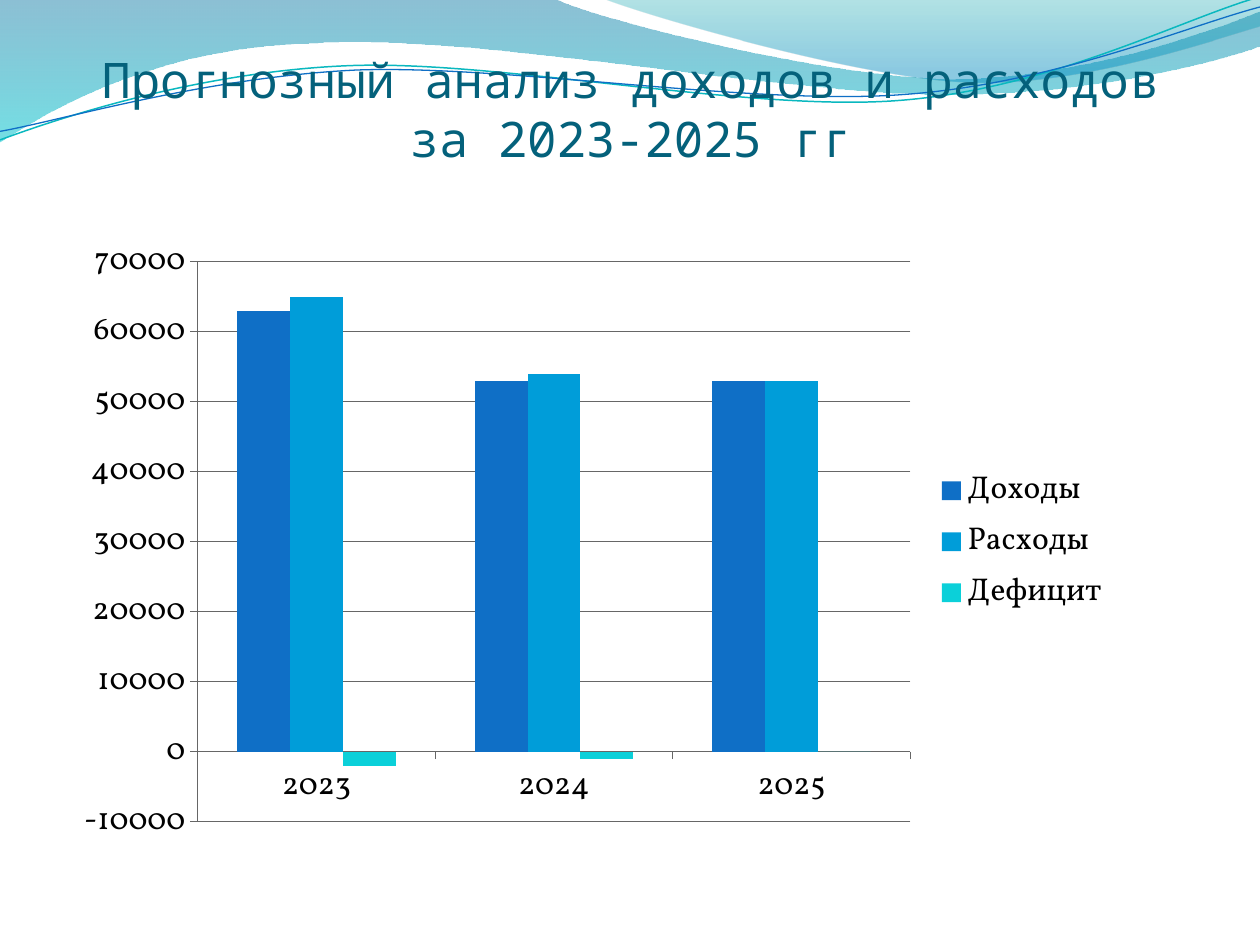
"""Builds a slide with wave decoration, a title and a budget forecast chart."""
import pptx
import pptx.chart.data
import pptx.dml.color
import pptx.enum.chart
import pptx.enum.text
import pptx.oxml
import pptx.oxml.ns
import pptx.util

Pt = pptx.util.Pt
HUES = {
    "title": "04617B", "text": "000000", "axis": "666666",
    "income": "0F6FC6", "spend": "009DD9", "gap": "0BD0D9",
    "deep": "0074A1", "aqua": "00C6CF", "mint": "00A1A9", "sky": "008BBF",
    "teal": "0AB8BF",
}
BAND = [[(-0.5, 0)], [(317, -0.7)],
        [(343, 12), (478, 45), (546, 45)], [(614, 45), (690, 19), (720, 6.5)],
        [(721, 26)], [(708, 32), (626, 55), (537, 54)],
        [(447, 54), (275, 20), (185, 24.5)], [(93, 26), (33, 60), (-0.7, 81.4)]]
SHEEN = [[(345, -0.7)], [(366, 8), (491, 45), (554, 47)],
         [(616, 49.5), (692, 23), (720, 15)], [(720, 0)]]
TEAL = [[(-1.4, 63)], [(34.2, 51.7), (114.3, 29.4), (199.4, 30)],
        [(284.4, 30.5), (425.8, 67.2), (512, 64.7)],
        [(599.2, 62.3), (676, 25.9), (720.6, 15.4)]]
BLUE = [[(-1.1, 58.1)], [(33.2, 53.7), (118.2, 32.6), (204.3, 32.7)],
        [(290.3, 33.7), (429.1, 63.8), (515.3, 61.4)],
        [(601.5, 59.4), (678.9, 30), (721.4, 21)]]
YEARS = ["2023", "2024", "2025"]
ROWS = [("Доходы", "income", (63000, 53000, 53000)),
        ("Расходы", "spend", (65000, 54000, 53000)),
        ("Дефицит", "gap", (-2000, -1000, 0))]


def tint(name):
    """Return the named colour."""
    return pptx.dml.color.RGBColor.from_string(HUES[name])


def node(tag, attrs=""):
    """Make one drawing element."""
    space = pptx.oxml.ns.nsdecls("a")
    return pptx.oxml.parse_xml(f"<a:{tag} {space} {attrs}/>")


def draw(slide, curve, close):
    """Add an outline of straight and cubic pieces."""
    dots = [(Pt(x), Pt(y)) for piece in curve for x, y in piece]
    pen = slide.shapes.build_freeform(*dots[0])
    pen.add_line_segments(dots[1:], close=close)
    shape = pen.convert_to_shape()
    shape.shadow.inherit = False
    lines = iter(list(shape._element.iter(pptx.oxml.ns.qn("a:lnTo"))))
    for piece in curve[1:]:
        group = [next(lines) for dot in piece]
        if len(group) == 3:
            bend = node("cubicBezTo")
            group[0].addprevious(bend)
            for line in group:
                bend.append(line[0])
                line.getparent().remove(line)
    return shape


def add_wave(slide, curve, stops):
    """Add a see-through wave shaded from top to bottom."""
    shape = draw(slide, curve, True)
    shape.line.fill.background()
    shape.fill.gradient()
    shape.fill.gradient_angle = 270
    for stop, (place, name, alpha) in zip(shape.fill.gradient_stops, stops):
        stop.position = place
        stop.color.rgb = tint(name)
    marks = shape._element.iter(pptx.oxml.ns.qn("a:srgbClr"))
    for mark, (place, name, alpha) in zip(marks, stops):
        mark.append(node("alpha", f'val="{alpha * 1000}"'))


def add_curve(slide, curve, name, width):
    """Add a thin open curve, slightly tilted."""
    shape = draw(slide, curve, False)
    shape.rotation = 357.3
    shape.fill.background()
    shape.line.color.rgb = tint(name)
    shape.line.width = Pt(width)


def set_title(slide, text):
    """Place and format the title in front of the waves."""
    title = slide.shapes.title
    title.left, title.top, title.width, title.height = map(Pt, (36, 55.5, 648, 40))
    frame = title.text_frame
    frame.auto_size = pptx.enum.text.MSO_AUTO_SIZE.NONE
    frame.word_wrap = True
    frame.vertical_anchor = pptx.enum.text.MSO_ANCHOR.BOTTOM
    frame.margin_left = frame.margin_right = frame.margin_bottom = 0
    frame.margin_top = Pt(3.6)
    para = frame.paragraphs[0]
    para.alignment = pptx.enum.text.PP_ALIGN.CENTER
    run = para.add_run()
    run.text = text
    run.font.size = Pt(28)
    run.font.name = "Noto Sans Mono"
    run.font.color.rgb = tint("title")
    slide.shapes._spTree.append(title._element)


def add_bars(slide):
    """Add the clustered column chart."""
    data = pptx.chart.data.CategoryChartData()
    data.categories = YEARS
    for label, name, vals in ROWS:
        data.add_series(label, vals)
    kinds = pptx.enum.chart
    chart = slide.shapes.add_chart(
        kinds.XL_CHART_TYPE.COLUMN_CLUSTERED,
        Pt(36), Pt(129.6), Pt(605.3), Pt(360), data).chart
    chart.has_title = False
    chart.font.size = Pt(18)
    chart.font.name = "Vollkorn"
    chart.font.color.rgb = tint("text")
    chart.has_legend = True
    chart.legend.position = kinds.XL_LEGEND_POSITION.RIGHT
    chart.legend.include_in_layout = False
    plot = chart.plots[0]
    plot.gap_width, plot.overlap = 150, 0
    plot.vary_by_categories = False
    for series, (label, name, vals) in zip(plot.series, ROWS):
        series.invert_if_negative = False
        series.format.fill.solid()
        series.format.fill.fore_color.rgb = tint(name)
    scale = chart.value_axis
    scale.minimum_scale, scale.maximum_scale = -10000, 70000
    scale.major_unit = 10000
    scale.has_major_gridlines = True
    for axis in (scale, chart.category_axis):
        axis.major_tick_mark = kinds.XL_TICK_MARK.OUTSIDE
    for part in (scale, chart.category_axis, scale.major_gridlines):
        part.format.line.color.rgb = tint("axis")
        part.format.line.width = Pt(0.75)


def main():
    """Build and save the slide."""
    deck = pptx.Presentation()
    deck.slide_width, deck.slide_height = Pt(720), Pt(540)
    slide = deck.slides.add_slide(deck.slide_layouts[5])
    add_wave(slide, BAND, [(0, "deep", 45), (1, "aqua", 55)])
    add_wave(slide, SHEEN, [(0, "mint", 30), (0.8, "sky", 45)])
    add_curve(slide, TEAL, "teal", 0.85)
    add_curve(slide, BLUE, "income", 0.75)
    set_title(slide, "Прогнозный анализ доходов и расходов за 2023-2025 гг")
    add_bars(slide)
    deck.save("out.pptx")


if __name__ == "__main__":
    main()
